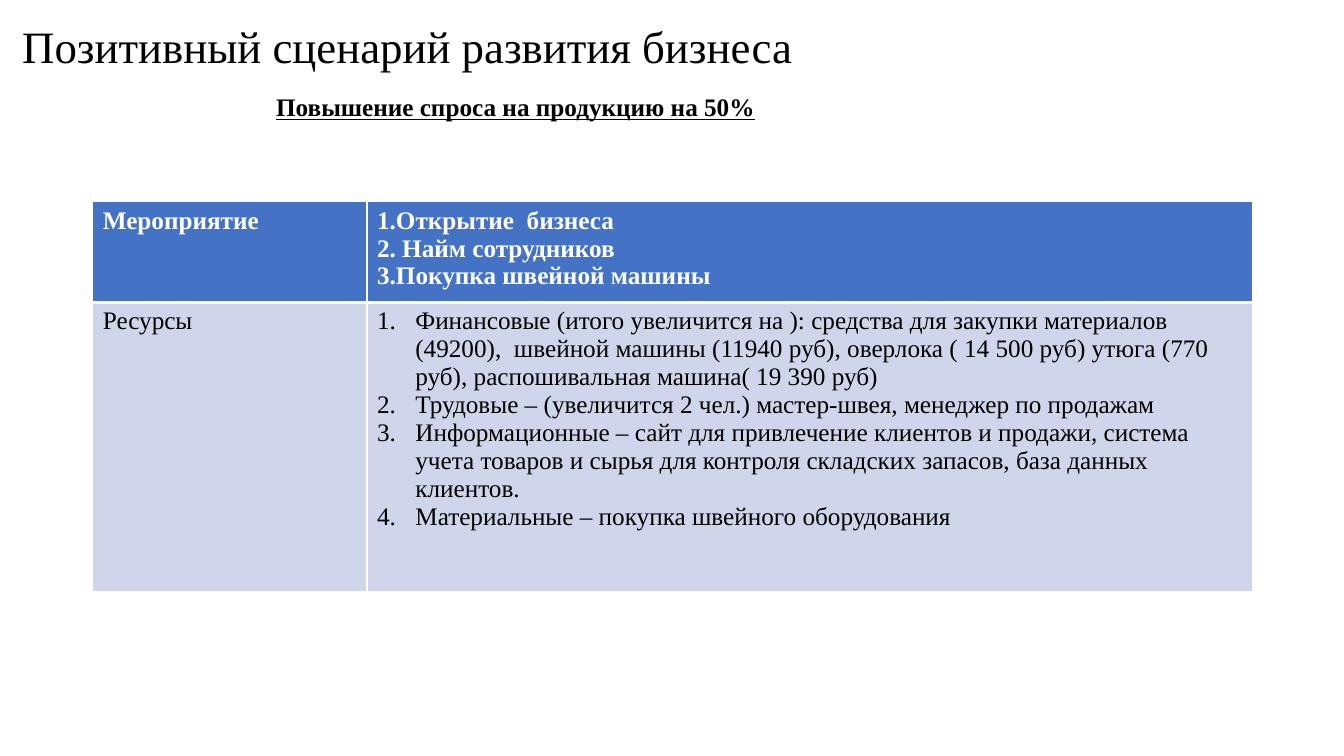
from lxml import etree
from pptx import Presentation
from pptx.dml.color import RGBColor
from pptx.enum.text import MSO_ANCHOR, MSO_AUTO_SIZE, PP_ALIGN
from pptx.oxml.ns import qn
from pptx.util import Inches, Pt

LEFT = PP_ALIGN.LEFT
TOP = MSO_ANCHOR.TOP
FIT_SHAPE = MSO_AUTO_SIZE.SHAPE_TO_FIT_TEXT
TITLE_ONLY = 5

BLACK = RGBColor(0x00, 0x00, 0x00)
WHITE = RGBColor(0xFF, 0xFF, 0xFF)
HEADER_BLUE = RGBColor(0x44, 0x72, 0xC4)
BODY_BLUE = RGBColor(0xCF, 0xD5, 0xEA)

ACTIVITIES = ["1.Открытие  бизнеса", "2. Найм сотрудников", "3.Покупка швейной машины"]
RESOURCES = [
    "Финансовые (итого увеличится на ): средства для закупки материалов (49200),  "
    "швейной машины (11940 руб), оверлока ( 14 500 руб) утюга (770 руб), "
    "распошивальная машина( 19 390 руб)",
    "Трудовые – (увеличится 2 чел.) мастер-швея, менеджер по продажам",
    "Информационные – сайт для привлечение клиентов и продажи, система учета товаров "
    "и сырья для контроля складских запасов, база данных клиентов.",
    "Материальные – покупка швейного оборудования",
]


class SlideBuilder:
    font_name = "Times New Roman"
    text_size = 18
    title_size = 32

    def __init__(self, presentation):
        self.slide = presentation.slides.add_slide(presentation.slide_layouts[TITLE_ONLY])

    def add_lines(self, frame, lines, size=text_size, color=BLACK, bold=False, underline=False):
        for index, line in enumerate(lines):
            paragraph = frame.paragraphs[0] if index == 0 else frame.add_paragraph()
            paragraph.alignment = LEFT
            run = paragraph.add_run()
            run.text = line
            font = run.font
            font.name, font.size, font.color.rgb = self.font_name, Pt(size), color
            font.bold, font.underline = bold, underline

    def title(self, text, left, top, width, height):
        shape = self.slide.shapes.title
        shape.left, shape.top = Inches(left), Inches(top)
        shape.width, shape.height = Inches(width), Inches(height)
        frame = shape.text_frame
        frame.vertical_anchor = TOP
        frame.auto_size = FIT_SHAPE
        self.add_lines(frame, [text], self.title_size)

    def subtitle(self, text, left, top, width, height):
        shape = self.slide.shapes.add_textbox(
            Inches(left), Inches(top), Inches(width), Inches(height))
        shape.text_frame.word_wrap = False
        shape.text_frame.auto_size = FIT_SHAPE
        self.add_lines(shape.text_frame, [text], bold=True, underline=True)

    def number(self, frame, indent=0.38):
        """Turn every paragraph of the frame into a numbered item."""
        for paragraph in frame.paragraphs:
            properties = paragraph._p.get_or_add_pPr()
            properties.set("marL", str(Inches(indent)))
            properties.set("indent", str(-Inches(indent)))
            etree.SubElement(properties, qn("a:buFont"), typeface="+mj-lt")
            etree.SubElement(properties, qn("a:buAutoNum"), type="arabicPeriod")

    def borders(self, cell, top, bottom):
        widths = {"lnL": 1, "lnR": 1, "lnT": top, "lnB": bottom}
        for side, width in widths.items():
            line = etree.SubElement(
                cell._tc.get_or_add_tcPr(), qn(f"a:{side}"), w=str(Pt(width)))
            fill = etree.SubElement(line, qn("a:solidFill"))
            etree.SubElement(fill, qn("a:srgbClr"), val=str(WHITE))

    def table(self, rows, left, top, column_widths, row_heights):
        """Add a table with a header row; each cell is a list of lines."""
        table = self.slide.shapes.add_table(
            len(rows), len(column_widths), Inches(left), Inches(top),
            Inches(sum(column_widths)), Inches(sum(row_heights))).table
        for column, width in zip(table.columns, column_widths):
            column.width = Inches(width)
        for row, height in zip(table.rows, row_heights):
            row.height = Inches(height)
        for row_index, row in enumerate(rows):
            header = row_index == 0
            for column_index, lines in enumerate(row):
                cell = table.cell(row_index, column_index)
                self.borders(cell, 1 if header else 3, 3 if header else 1)
                cell.fill.solid()
                cell.fill.fore_color.rgb = HEADER_BLUE if header else BODY_BLUE
                self.add_lines(
                    cell.text_frame, lines, color=WHITE if header else BLACK, bold=header)
        return table


def main():
    presentation = Presentation()
    presentation.slide_width, presentation.slide_height = Inches(13.33), Inches(7.5)
    builder = SlideBuilder(presentation)
    builder.title("Позитивный сценарий развития бизнеса", 0.12, 0.14, 8.66, 0.64)
    builder.subtitle("Повышение спроса на продукцию на 50%", 2.64, 0.86, 5, 0.4)
    table = builder.table(
        [[["Мероприятие"], ACTIVITIES], [["Ресурсы"], RESOURCES]],
        0.92, 2, [2.72, 8.78], [0.92, 2.87])
    builder.number(table.cell(1, 1).text_frame)
    presentation.save("out.pptx")


if __name__ == "__main__":
    main()
